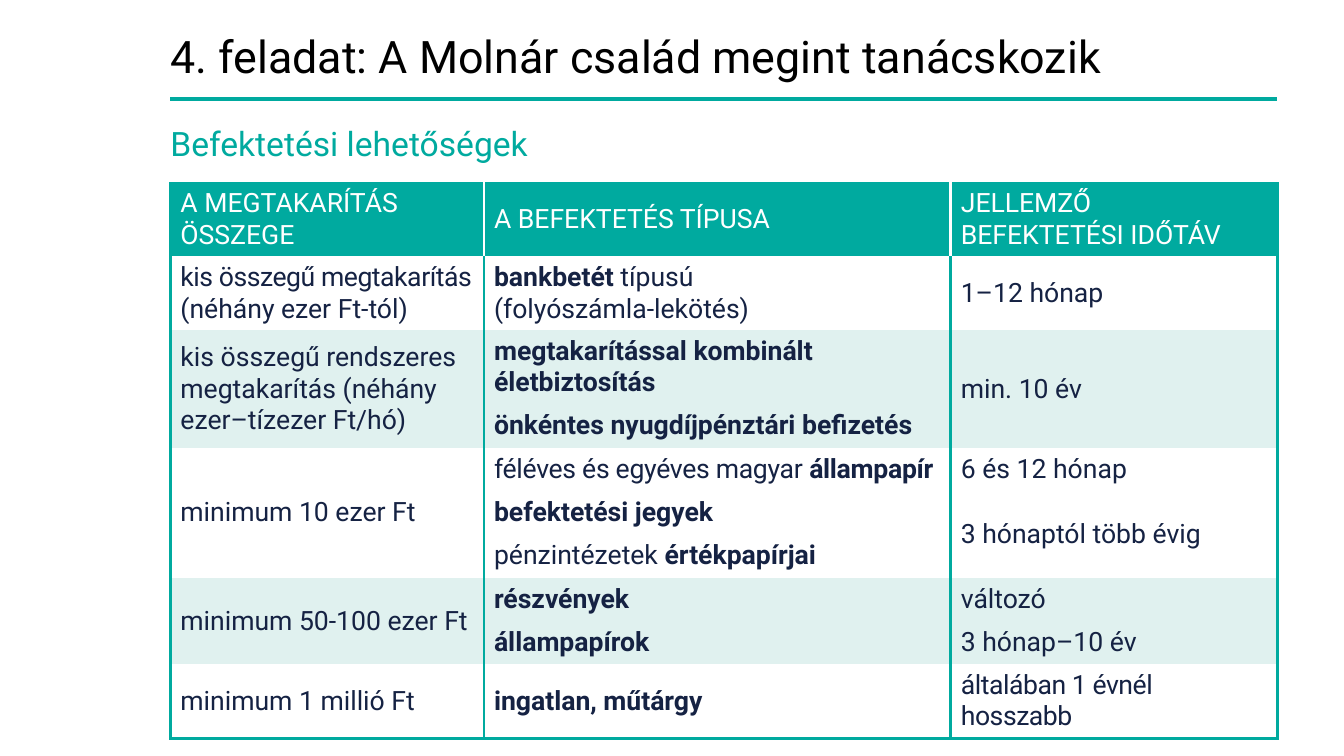
from lxml import etree
from pptx import Presentation
from pptx import util as u
from pptx.dml.color import RGBColor
from pptx.enum import shapes, text
from pptx.oxml import ns

COLORS = {"teal": "00AA9F", "mint": "E0F1EF", "white": "FFFFFF", "navy": "152243", "black": "000000"}
FONT = "Roboto"
LEFT, WIDTH = 1.69, 10.98
COLUMN_WIDTHS = [3.11, 4.63, 3.24]
ROW_HEIGHT = 0.43
HEADINGS = ["A MEGTAKARÍTÁS\nÖSSZEGE", "A BEFEKTETÉS TÍPUSA", "JELLEMZŐ\vBEFEKTETÉSI IDŐTÁV"]
OPTIONS = [
    ["kis összegű megtakarítás\v(néhány ezer Ft-tól)", "**bankbetét **típusú\v(folyószámla-lekötés)", "1–12 hónap"],
    ["kis összegű rendszeres\vmegtakarítás (néhány\vezer–tízezer Ft/hó)",
     "**megtakarítással kombinált\véletbiztosítás**", "min. 10 év"],
    [None, "**önkéntes nyugdíjpénztári befizetés**", None],
    ["minimum 10 ezer Ft", "féléves és egyéves magyar **állampapír**", "6 és 12 hónap"],
    [None, "**befektetési jegyek**", "3 hónaptól több évig"],
    [None, "pénzintézetek **értékpapírjai**", None],
    ["minimum 50-100 ezer Ft", "**részvények**", "változó"],
    [None, "**állampapírok**", "3 hónap–10 év"],
    ["minimum 1 millió Ft", "**ingatlan, műtárgy**", "általában 1 évnél hosszabb"],
]
SPACING = {"kis összegű megtakarítás": -30, "féléves és egyéves magyar ": -20,
           "állampapír": -20, "általában 1 évnél hosszabb": -30}
MERGES = [(2, 3, 0), (2, 3, 2), (4, 6, 0), (5, 6, 2), (7, 8, 0)]
MINT_ROWS = {2, 3, 7, 8}


def rgb(name):
    return RGBColor.from_string(COLORS[name])


def write(frame, wording, size, color, line_spacing=None):
    for index, line in enumerate(wording.split("\n")):
        paragraph = frame.add_paragraph() if index else frame.paragraphs[0]
        if line_spacing:
            paragraph.line_spacing = line_spacing
        for part, fragment in enumerate(line.split("**")):
            for position, words in enumerate(fragment.split("\v")):
                if position:
                    paragraph.add_line_break()
                if not words:
                    continue
                run = paragraph.add_run()
                run.text = words
                run.font.name = FONT
                run.font.size = u.Pt(size)
                run.font.bold = part % 2 == 1
                run.font.color.rgb = rgb(color)
                if words in SPACING:
                    run.font._element.set("spc", str(SPACING[words]))


def add_heading(slide, wording, left, top, width, height, size, color, anchor):
    box = slide.shapes.add_textbox(*map(u.Inches, (left, top, width, height)))
    frame = box.text_frame
    frame.word_wrap = True
    frame.margin_left = frame.margin_right = frame.margin_top = frame.margin_bottom = 0
    frame.vertical_anchor = anchor
    write(frame, wording, size, color, line_spacing=0.9)


def add_rule(slide, left, top, width):
    rule = slide.shapes.add_connector(
        shapes.MSO_CONNECTOR.STRAIGHT, u.Inches(left), u.Inches(top), u.Inches(left + width), u.Inches(top))
    rule.line.color.rgb = rgb("teal")
    rule.line.width = u.Pt(3)
    properties = rule._element.spPr
    etree.SubElement(properties.find(ns.qn("a:ln")), ns.qn("a:round"))
    etree.SubElement(properties, ns.qn("a:effectLst"))


def set_borders(cell, **sides):
    properties = cell._tc.get_or_add_tcPr()
    for side in "LRTB":
        border = etree.SubElement(properties, ns.qn("a:ln" + side))
        if side in sides:
            border.set("w", str(u.Pt(2.25)))
            fill = etree.SubElement(border, ns.qn("a:solidFill"))
            etree.SubElement(fill, ns.qn("a:srgbClr")).set("val", COLORS[sides[side]])
        else:
            border.set("w", "0")
            etree.SubElement(border, ns.qn("a:noFill"))


def add_options_table(slide, left, top, width):
    rows = [HEADINGS] + OPTIONS
    last_row, last_column = len(rows) - 1, len(HEADINGS) - 1
    frame = slide.shapes.add_table(
        len(rows), len(HEADINGS), u.Inches(left), u.Inches(top), u.Inches(width), u.Inches(ROW_HEIGHT * len(rows)))
    table = frame.table
    table.first_row = table.horz_banding = False
    for column, column_width in zip(table.columns, COLUMN_WIDTHS):
        column.width = u.Inches(column_width)
    for row in table.rows:
        row.height = u.Inches(ROW_HEIGHT)
    for first, last, column in MERGES:
        table.cell(first, column).merge(table.cell(last, column))
    for r, row in enumerate(rows):
        for c, wording in enumerate(row):
            cell = table.cell(r, c)
            sides = {"L": "white" if r == 0 and c > 0 else "teal",
                     "R": "white" if r == 0 and c < last_column else "teal"}
            if r == last_row:
                sides["B"] = "teal"
            set_borders(cell, **sides)
            cell.fill.solid()
            cell.fill.fore_color.rgb = rgb("teal" if r == 0 else "mint" if r in MINT_ROWS else "white")
            cell.vertical_anchor = text.MSO_ANCHOR.MIDDLE
            if wording:
                write(cell.text_frame, wording, 19, "navy" if r else "white")


def main():
    deck = Presentation()
    deck.slide_width, deck.slide_height = u.Inches(13.33), u.Inches(7.5)
    slide = deck.slides.add_slide(deck.slide_layouts[6])
    add_rule(slide, LEFT, 0.98, WIDTH)
    add_heading(slide, "4. feladat: A Molnár család megint tanácskozik",
                LEFT, 0.33, WIDTH, 0.51, 32, "black", text.MSO_ANCHOR.MIDDLE)
    add_heading(slide, "Befektetési lehetőségek",
                LEFT, 1.26, WIDTH, 0.36, 24, "teal", text.MSO_ANCHOR.TOP)
    add_options_table(slide, LEFT, 1.81, WIDTH)
    deck.save("out.pptx")


if __name__ == "__main__":
    main()
